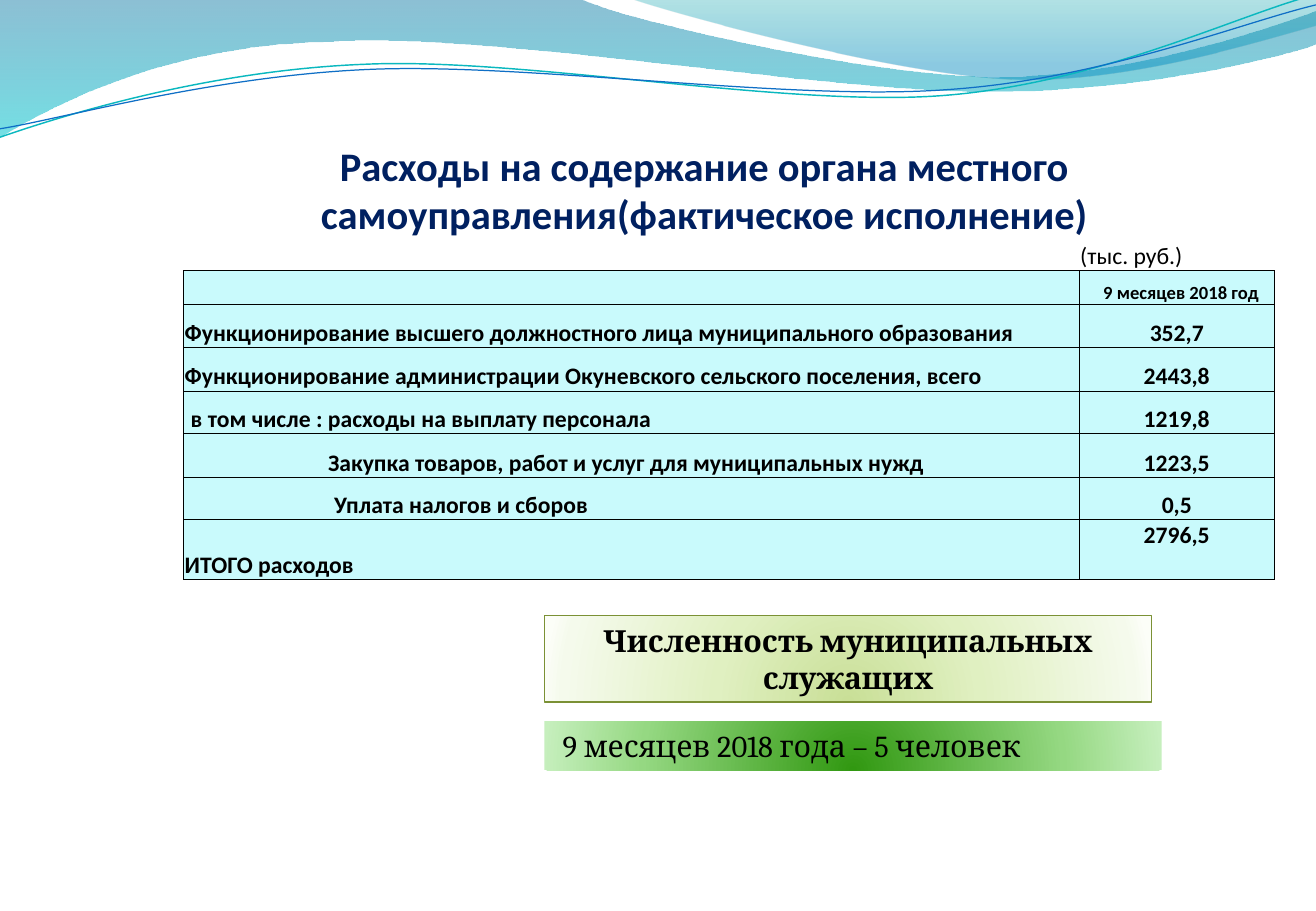
from lxml.etree import SubElement
from pptx import Presentation
from pptx.dml.color import RGBColor
from pptx.enum.shapes import MSO_SHAPE
from pptx.enum.text import MSO_ANCHOR, PP_ALIGN
from pptx.oxml.ns import qn
from pptx.util import Inches, Pt


def color(value):
    return RGBColor.from_string(value)


def set_gradient(shape, stops, radial=False):
    """Fill with (position, colour, opacity) stops, all in percent."""
    shape.fill.gradient()
    gradient = shape._element.spPr.find(qn("a:gradFill"))
    gradient.clear()
    stop_list = SubElement(gradient, qn("a:gsLst"))
    for position, value, opacity in stops:
        stop = SubElement(stop_list, qn("a:gs"), pos=str(position * 1000))
        tint = SubElement(stop, qn("a:srgbClr"), val=value)
        SubElement(tint, qn("a:alpha"), val=str(opacity * 1000))
    if radial:
        center = SubElement(gradient, qn("a:path"), path="circle")
        SubElement(center, qn("a:fillToRect"), l="50000", t="130000", r="50000", b="-30000")
    else:
        SubElement(gradient, qn("a:lin"), ang="5400000", scaled="1")


presentation = Presentation()
presentation.slide_width, presentation.slide_height = Inches(10.83), Inches(7.5)
slide = presentation.slides.add_slide(presentation.slide_layouts[6])
shapes = slide.shapes

# Waves: a pair is a straight step, three pairs are a Bezier curve
waves = [
    ([(0, 0), (4.77, -0.01), (5.15, 0.17, 7.19, 0.63, 8.22, 0.63),
      (9.24, 0.63, 10.38, 0.26, 10.83, 0.09), (10.84, 0.36),
      (10.65, 0.44, 9.42, 0.76, 8.08, 0.75), (6.74, 0.75, 4.14, 0.28, 2.79, 0.34),
      (1.4, 0.36, 0.5, 0.83, -0.01, 1.13)],
     [(0, "0074A1", 45), (100, "00C6CF", 55)], None),
    ([(5.19, -0.01), (5.52, 0.11, 7.39, 0.62, 8.33, 0.65),
      (9.27, 0.69, 10.42, 0.32, 10.83, 0.21), (10.83, 0)],
     [(0, "00A1A9", 30), (80, "008BBF", 45)], None),
    ([(0, 1.13), (0.52, 0.95, 1.71, 0.58, 3, 0.53), (4.28, 0.47, 6.42, 0.88, 7.72, 0.79),
      (9.02, 0.7, 10.17, 0.13, 10.81, -0.04)], None, ("0AB8BF", 0.85)),
    ([(0, 1.06), (0.51, 0.98, 1.77, 0.62, 3.07, 0.57), (4.36, 0.52, 6.47, 0.83, 7.76, 0.74),
      (9.06, 0.66, 10.2, 0.19, 10.83, 0.04)], None, ("0F6FC6", 0.75)),
]
for segments, stops, line in waves:
    ends = [(Inches(segment[-2]), Inches(segment[-1])) for segment in segments]
    builder = shapes.build_freeform(*ends[0])
    builder.add_line_segments(ends[1:], close=line is None)
    wave = builder.convert_to_shape()
    # Turn the steps that have control points into curves
    steps = list(wave._element.iter(qn("a:lnTo")))
    for step, segment in zip(steps, segments[1:]):
        if len(segment) == 6:
            curve = step.makeelement(qn("a:cubicBezTo"))
            for x, y in zip(segment[::2], segment[1::2]):
                SubElement(curve, qn("a:pt"), x=str(Inches(x) - wave.left),
                           y=str(Inches(y) - wave.top))
            step.getparent().replace(step, curve)
    wave.shadow.inherit = False
    if line:
        wave.fill.background()
        wave.line.color.rgb = color(line[0])
        wave.line.width = Pt(line[1])
    else:
        set_gradient(wave, stops)
        wave.line.fill.background()

# Title
title = shapes.add_textbox(Inches(1.35), Inches(0.71), Inches(8.89), Inches(1.25))
frame = title.text_frame
frame.word_wrap = True
frame.vertical_anchor = MSO_ANCHOR.BOTTOM
frame.margin_left = frame.margin_right = frame.margin_bottom = 0
paragraph = frame.paragraphs[0]
paragraph.text = "Расходы на содержание органа местного самоуправления(фактическое исполнение)"
paragraph.alignment = PP_ALIGN.CENTER
paragraph.font.name, paragraph.font.size, paragraph.font.bold = "Calibri", Pt(24), True
paragraph.font.color.rgb = color("002060")

# Expense table: label, value, label indent, row height
rows = [
    ("", "(тыс. руб.)", 0, 0.35),
    ("", "9 месяцев 2018 год", 0, 0.28),
    ("Функционирование высшего должностного лица муниципального образования", "352,7", 0, 0.35),
    ("Функционирование администрации Окуневского сельского поселения, всего", "2443,8", 0, 0.36),
    ("в том числе : расходы на выплату персонала", "1219,8", 0.05, 0.35),
    ("Закупка товаров, работ и услуг для муниципальных нужд", "1223,5", 1.18, 0.36),
    ("Уплата налогов и сборов", "0,5", 1.23, 0.35),
    ("ИТОГО расходов", "2796,5", 0, 0.49),
]
table = shapes.add_table(len(rows), 2, Inches(1.51), Inches(1.88), Inches(8.98),
                         Inches(sum(row[3] for row in rows))).table
table.first_row = table.horz_banding = False
table.columns[0].width, table.columns[1].width = Inches(7.37), Inches(1.61)
for row_index, (label, value, indent, height) in enumerate(rows):
    table.rows[row_index].height = Inches(height)
    for column_index, text in enumerate((label, value)):
        cell = table.cell(row_index, column_index)
        cell.margin_left = Inches(0.01 + (0 if column_index else indent))
        cell.margin_right = cell.margin_top = Inches(0.01)
        cell.margin_bottom = 0
        cell.vertical_anchor = MSO_ANCHOR.BOTTOM
        paragraph = cell.text_frame.paragraphs[0]
        paragraph.text = text
        paragraph.font.name = "Calibri"
        paragraph.font.size = Pt(11 if row_index == 1 else 14)
        paragraph.font.bold = row_index > 0
        paragraph.font.color.rgb = color("000000")
        if column_index and row_index:
            paragraph.alignment = PP_ALIGN.CENTER
        properties = cell._tc.get_or_add_tcPr()
        for side in ("L", "R", "T", "B"):
            border = SubElement(properties, qn("a:ln" + side), w="6350")
            if row_index or side == "B":
                border_fill = SubElement(border, qn("a:solidFill"))
                SubElement(border_fill, qn("a:srgbClr"), val="000000")
            else:
                SubElement(border, qn("a:noFill"))
        if row_index:
            cell.fill.solid()
            cell.fill.fore_color.rgb = color("C9FAFC")
        else:
            cell.fill.background()
table.cell(1, 1).margin_left = Inches(0.08)
table.cell(len(rows) - 1, 1).vertical_anchor = MSO_ANCHOR.TOP

# Staff panels
panels = [
    ("Численность муниципальных служащих", 5.07, 5, 0.71, 0.1, PP_ALIGN.CENTER, True, "7B9135",
     [(0, "C9DF97", 100), (43, "E0F0C1", 100), (93, "F5FAEC", 100), (100, "FCFEF8", 100)]),
    ("9 месяцев 2018 года – 5 человек", 5.94, 5.08, 0.4, 0.15, PP_ALIGN.LEFT, False, None,
     [(0, "319811", 100), (68, "95D882", 100), (100, "C6EFBD", 100)]),
]
for text, top, width, height, margin, alignment, bold, outline, stops in panels:
    panel = shapes.add_shape(MSO_SHAPE.RECTANGLE, Inches(4.48), Inches(top),
                             Inches(width), Inches(height))
    panel.shadow.inherit = False
    set_gradient(panel, stops, radial=True)
    if outline:
        panel.line.color.rgb = color(outline)
        panel.line.width = Pt(0.75)
    else:
        panel.line.fill.background()
    frame = panel.text_frame
    frame.word_wrap = True
    frame.margin_left = Inches(margin)
    paragraph = frame.paragraphs[0]
    paragraph.text = text
    paragraph.alignment = alignment
    paragraph.font.name, paragraph.font.size, paragraph.font.bold = "Cambria", Pt(18), bold
    paragraph.font.color.rgb = color("000000")

presentation.save("out.pptx")
